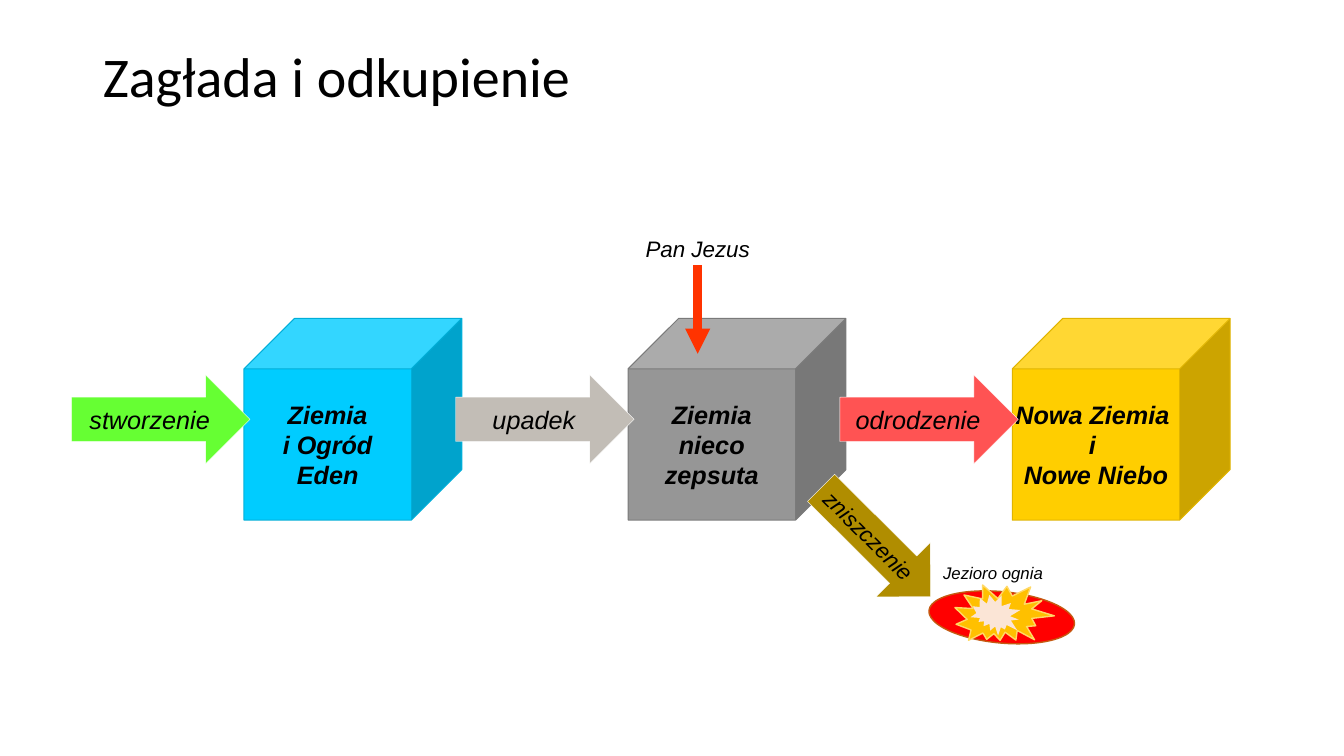
"""Builds the slide about destruction and redemption."""
from dataclasses import dataclass

from lxml import etree
from pptx import Presentation
from pptx.dml.color import RGBColor
from pptx.enum import shapes, text
from pptx.oxml.ns import qn
from pptx.util import Inches, Pt


@dataclass(frozen=True)
class Theme:
    ink: str = "000000"
    paper: str = "FFFFFF"
    eden: str = "00CCFF"
    eden_edge: str = "00AED8"
    spoiled: str = "969696"
    spoiled_edge: str = "7A7A7A"
    renewed: str = "FFCE00"
    renewed_edge: str = "E0B400"
    creation: str = "66FF33"
    fall: str = "C2BDB6"
    rebirth: str = "FF5353"
    ruin: str = "B08D00"
    descent: str = "FF3300"
    lake: str = "FF0000"
    lake_edge: str = "C55A11"
    flame: str = "FFC000"
    flame_edge: str = "FFD966"
    glow: str = "FBE5D6"
    title_font: str = "Calibri"
    body_font: str = "Arial"
    title_size: int = 40
    body_size: int = 18
    label_size: int = 16
    small_size: int = 12


class SlideBuilder:
    def __init__(self, slide, theme):
        self.slide = slide
        self.theme = theme

    def set_text(self, frame, content, size, bold=False):
        frame.text = content
        frame.vertical_anchor = text.MSO_ANCHOR.MIDDLE
        for paragraph in frame.paragraphs:
            paragraph.alignment = text.PP_ALIGN.CENTER
            for run in paragraph.runs:
                font = run.font
                font.name, font.size = self.theme.body_font, Pt(size)
                font.bold, font.italic = bold, True
                font.color.rgb = RGBColor.from_string(self.theme.ink)

    def title(self, content, box):
        title = self.slide.shapes.title
        title.left, title.top, title.width, title.height = map(Inches, box)
        frame = title.text_frame
        frame.text = content
        frame.vertical_anchor = text.MSO_ANCHOR.MIDDLE
        paragraph = frame.paragraphs[0]
        paragraph.alignment = text.PP_ALIGN.LEFT
        paragraph.line_spacing = 0.9
        font = paragraph.runs[0].font
        font.name, font.size = self.theme.title_font, Pt(self.theme.title_size)
        font.color.rgb = RGBColor.from_string(self.theme.ink)

    def shape(self, kind, box, fill, edge=None, weight=1, rotation=0, parent=None):
        shape = (parent or self.slide).shapes.add_shape(kind, *map(Inches, box))
        shape.shadow.inherit = False
        shape.rotation = rotation
        shape.fill.solid()
        shape.fill.fore_color.rgb = RGBColor.from_string(fill)
        if edge:
            shape.line.color.rgb = RGBColor.from_string(edge)
            shape.line.width = Pt(weight)
        else:
            shape.line.fill.background()
        return shape

    def cube(self, content, box, fill, edge):
        cube = self.shape(shapes.MSO_SHAPE.CUBE, box, fill, edge, 0.75)
        cube.text_frame.word_wrap = False
        self.set_text(cube.text_frame, content, self.theme.body_size, bold=True)

    def arrow(self, content, box, fill, size, rotation=0):
        arrow = self.shape(shapes.MSO_SHAPE.RIGHT_ARROW, box, fill,
                           self.theme.paper, 0.25, rotation)
        arrow.text_frame.word_wrap = False
        self.set_text(arrow.text_frame, content, size)

    def label(self, content, box, size):
        label = self.slide.shapes.add_textbox(*map(Inches, box))
        frame = label.text_frame
        frame.word_wrap = True
        frame.auto_size = text.MSO_AUTO_SIZE.SHAPE_TO_FIT_TEXT
        frame.margin_left = frame.margin_right = Inches(0.03)
        frame.margin_top = frame.margin_bottom = Inches(0.03)
        self.set_text(frame, content, size)
        return label

    def pointer(self, source, start, end, color, weight):
        connector = self.slide.shapes.add_connector(
            shapes.MSO_CONNECTOR.STRAIGHT, *map(Inches, start + end))
        connector.begin_connect(source, 2)
        connector.line.color.rgb = RGBColor.from_string(color)
        connector.line.width = Pt(weight)
        properties = connector._element.spPr
        etree.SubElement(properties.get_or_add_ln(), qn("a:tailEnd"), type="triangle")
        etree.SubElement(properties, qn("a:effectLst"))

    def fire_lake(self):
        theme, group = self.theme, self.slide.shapes.add_group_shape()
        burst = shapes.MSO_SHAPE.EXPLOSION2
        self.shape(shapes.MSO_SHAPE.FLOWCHART_CONNECTOR, (9.21, 5.87, 1.45, 0.51),
                   theme.lake, theme.lake_edge, rotation=5.4, parent=group)
        self.shape(burst, (9.47, 5.76, 0.97, 0.68), theme.flame, theme.flame_edge,
                   rotation=16.2, parent=group)
        self.shape(burst, (9.65, 5.88, 0.47, 0.45), theme.glow,
                   rotation=56.2, parent=group)


def main():
    presentation = Presentation()
    presentation.slide_width, presentation.slide_height = Inches(13.33), Inches(7.5)
    slide = presentation.slides.add_slide(presentation.slide_layouts[5])
    theme = Theme()
    builder = SlideBuilder(slide, theme)
    builder.title("Zagłada i odkupienie", (0.92, 0.4, 11.5, 0.78))

    pitch = 3.81
    worlds = [
        ("Ziemia\ni Ogród\vEden", theme.eden, theme.eden_edge),
        ("Ziemia\vnieco\vzepsuta", theme.spoiled, theme.spoiled_edge),
        ("Nowa Ziemia \ni \nNowe Niebo", theme.renewed, theme.renewed_edge),
    ]
    for index, (content, fill, edge) in enumerate(worlds):
        builder.cube(content, (2.42 + index * pitch, 3.16, 2.16, 2), fill, edge)

    events = [("stworzenie", theme.creation), ("upadek", theme.fall),
              ("odrodzenie", theme.rebirth)]
    for index, (content, fill) in enumerate(events):
        builder.arrow(content, (0.71 + index * pitch, 3.72, 1.77, 0.88),
                      fill, theme.body_size)
    builder.arrow("zniszczenie", (7.92, 5, 1.53, 0.76), theme.ruin,
                  theme.label_size, rotation=44.9)

    builder.label("Jezioro ognia", (9.13, 5.55, 1.44, 0.26), theme.small_size)
    saviour = builder.label("Pan Jezus", (6.2, 2.3, 1.44, 0.33), theme.label_size)
    builder.pointer(saviour, (6.92, 2.6), (6.92, 3.51), theme.descent, 6)
    builder.fire_lake()
    presentation.save("out.pptx")


if __name__ == "__main__":
    main()
